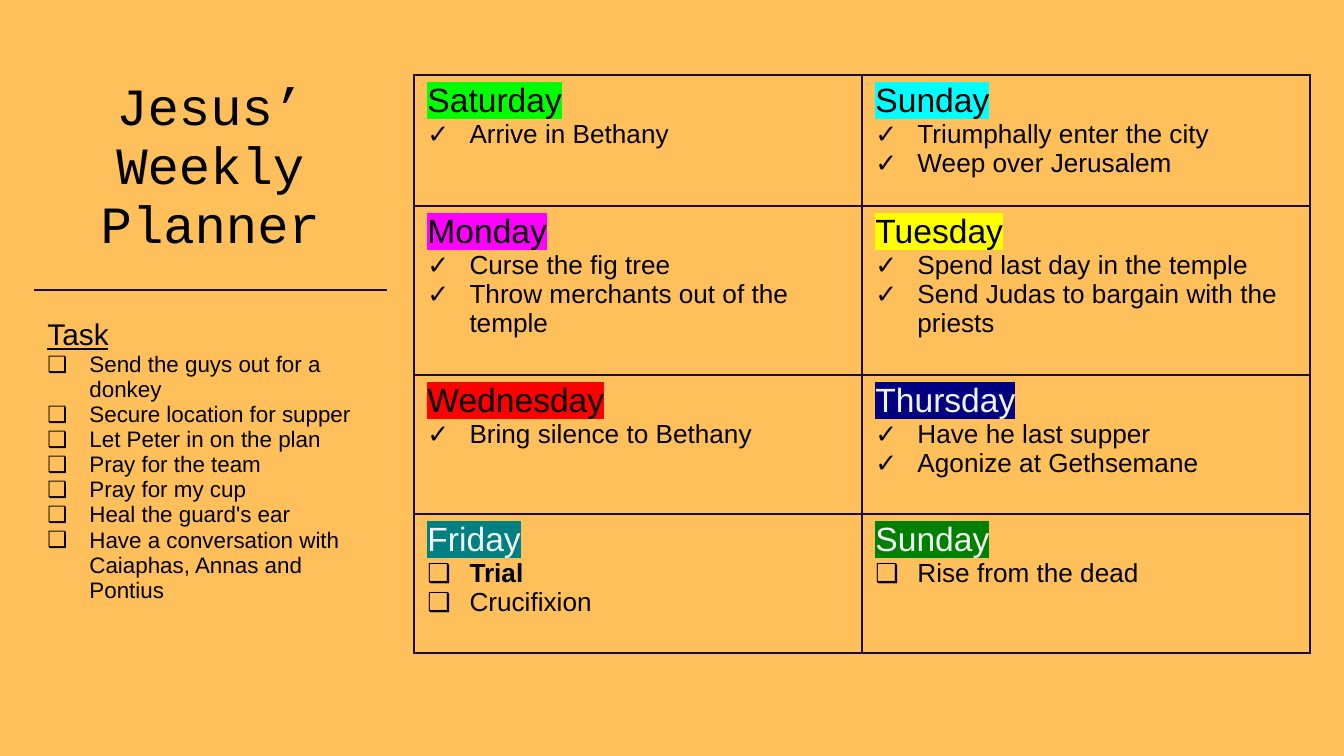
"""Build a weekly planner slide with a task list and a grid of days."""
import pptx
import pptx.dml.color
import pptx.enum.text
import pptx.oxml
import pptx.oxml.ns
import pptx.util

Pt = pptx.util.Pt
NS = pptx.oxml.ns.nsdecls("a")
INK = "180E44"
BLACK = "000000"
PALE = "F3F3F3"
CHECK, BOX = "✓", "❑"


def rgb(value):
    """Turn a hex string into a colour."""
    return pptx.dml.color.RGBColor.from_string(value)


def write(p, text, size, color=BLACK, font="Arial", highlight=None, bullet=None):
    """Add one formatted run to a paragraph, with an optional bullet."""
    if bullet:
        pPr = p._p.get_or_add_pPr()
        pPr.set("marL", str(Pt(22.5)))
        pPr.set("indent", str(-Pt(22.5)))
        for xml in (f'<a:buClr {NS}><a:srgbClr val="{BLACK}"/></a:buClr>',
                    f'<a:buFont {NS} typeface="Arial"/>',
                    f'<a:buChar {NS} char="{bullet}"/>'):
            pPr.append(pptx.oxml.parse_xml(xml))
    r = p.add_run()
    r.text = text
    r.font.size = Pt(size)
    r.font.color.rgb = rgb(color)
    if highlight:
        r._r.get_or_add_rPr().append(pptx.oxml.parse_xml(
            f'<a:highlight {NS}><a:srgbClr val="{highlight}"/></a:highlight>'))
    r.font.name = font
    return r


days = [
    ("Saturday", BLACK, "00FF00", CHECK, ["Arrive in Bethany"]),
    ("Sunday", BLACK, "00FFFF", CHECK, ["Triumphally enter the city", "Weep over Jerusalem"]),
    ("Monday", BLACK, "FF00FF", CHECK, ["Curse the fig tree", "Throw merchants out of the temple"]),
    ("Tuesday", BLACK, "FFFF00", CHECK,
     ["Spend last day in the temple", "Send Judas to bargain with the priests"]),
    ("Wednesday", BLACK, "FF0000", CHECK, ["Bring silence to Bethany"]),
    ("Thursday", PALE, "000080", CHECK, ["Have he last supper", "Agonize at Gethsemane"]),
    ("Friday", PALE, "008080", BOX, ["Trial", "Crucifixion"]),
    ("Sunday", PALE, "008000", BOX, ["Rise from the dead"]),
]
tasks = [
    "Send the guys out for a donkey",
    "Secure location for supper",
    "Let Peter in on the plan",
    "Pray for the team",
    "Pray for my cup",
    "Heal the guard's ear",
    "Have a conversation with Caiaphas, Annas and Pontius",
]

prs = pptx.Presentation()
prs.slide_width, prs.slide_height = Pt(720), Pt(405)
slide = prs.slides.add_slide(prs.slide_layouts[6])
slide.background.fill.solid()
slide.background.fill.fore_color.rgb = rgb("FFC05C")

tables = []
for left, width, cols, heights, borders in (
        (221.8, 480, 2, (70.2, 90.5, 74.5, 74.5), ("LRTB",) * 4),
        (18.2, 189, 1, (115.2, 198.7), ("B", "T"))):
    sp = slide.shapes.add_table(len(heights), cols, Pt(left), Pt(40.2), Pt(width), Pt(sum(heights)))
    table = sp.table
    table.first_row = table.horz_banding = False
    for row, height, sides in zip(table.rows, heights, borders):
        row.height = Pt(height)
        for cell in row.cells:
            for side in "LRTB":
                paint = (f'<a:solidFill><a:srgbClr val="{INK}"/></a:solidFill>'
                         if side in sides else "<a:noFill/>")
                cell._tc.get_or_add_tcPr().append(pptx.oxml.parse_xml(
                    f'<a:ln{side} {NS} w="{Pt(1)}">{paint}</a:ln{side}>'))
            cell.fill.background()
    tables.append(table)
planner, sidebar = tables

for i, (day, color, highlight, bullet, items) in enumerate(days):
    tf = planner.cell(i // 2, i % 2).text_frame
    write(tf.paragraphs[0], day, 18, color, highlight=highlight)
    for item in items:
        r = write(tf.add_paragraph(), item, 14, bullet=bullet)
        r.font.bold = item == "Trial"

p = sidebar.cell(0, 0).text_frame.paragraphs[0]
p.alignment = pptx.enum.text.PP_ALIGN.CENTER
write(p, "Jesus’ Weekly Planner", 28, font="Courier New")

cell = sidebar.cell(1, 0)
cell.margin_top = Pt(15.5)
tf = cell.text_frame
r = write(tf.paragraphs[0], "Task", 16)
r.font.underline = True
for task in tasks:
    write(tf.add_paragraph(), task, 12, bullet=BOX)

prs.save("out.pptx")
